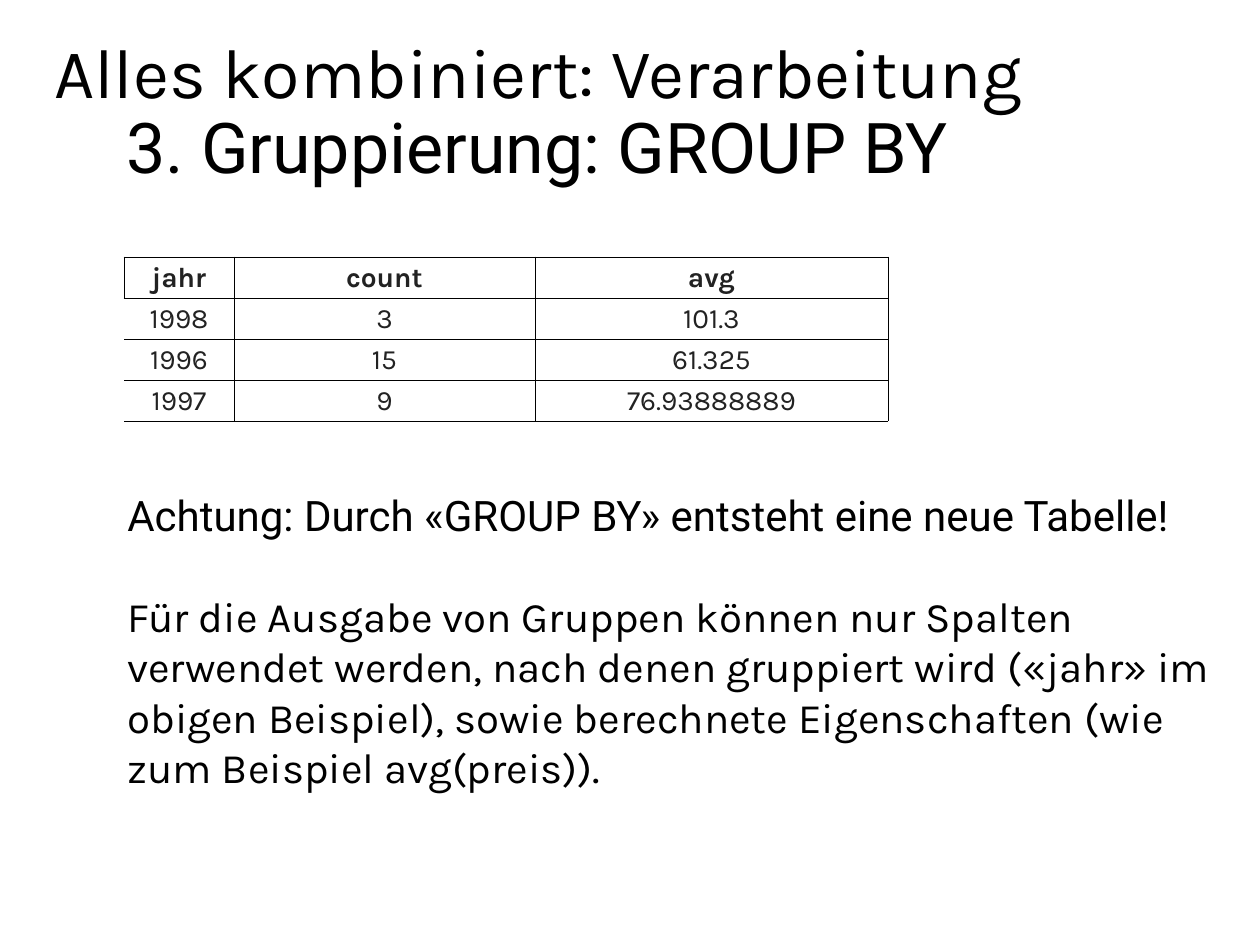
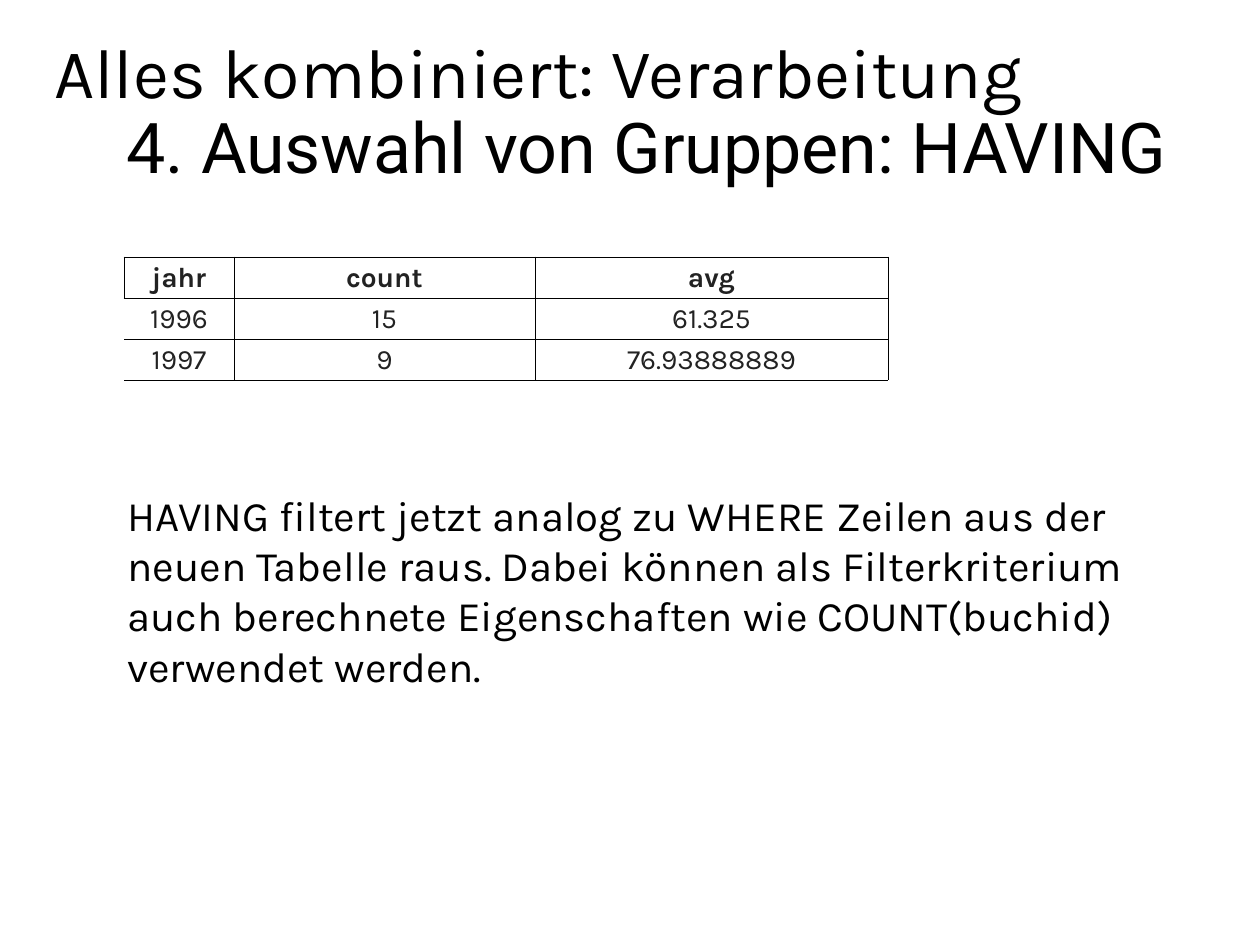
from copy import deepcopy
from lxml import etree
from pptx import Presentation
from pptx.dml.color import RGBColor
from pptx.enum.text import MSO_ANCHOR as Anchor, MSO_AUTO_SIZE as AutoSize, PP_ALIGN as Align
from pptx.oxml.ns import qn
from pptx.util import Emu, Pt

# Content
TITLE = "Alles kombiniert: Verarbeitung"
HEADER = ("jahr", "count", "avg")
ROW_1998 = ("1998", "3", "101.3")
ROW_1996 = ("1996", "15", "61.325")
ROW_1997 = ("1997", "9", "76.93888889")
SLIDES = [
    {
        "subtitle": "3. Gruppierung: GROUP BY",
        "rows": [ROW_1998, ROW_1996, ROW_1997],
        "body": [
            ("Achtung: Durch «GROUP BY» entsteht eine neue Tabelle!", "Roboto"),
            ("Für die Ausgabe von Gruppen können nur Spalten verwendet werden, "
             "nach denen gruppiert wird («jahr» im obigen Beispiel), sowie "
             "berechnete Eigenschaften (wie zum Beispiel avg(preis)).", "Karla"),
        ],
        "body_height": 369,
    },
    {
        "subtitle": "4. Auswahl von Gruppen: HAVING",
        "rows": [ROW_1996, ROW_1997],
        "body": [
            ("HAVING filtert jetzt analog zu WHERE Zeilen aus der neuen Tabelle "
             "raus. Dabei können als Filterkriterium auch berechnete "
             "Eigenschaften wie COUNT(buchid) verwendet werden.", "Karla"),
        ],
        "body_height": 267,
    },
]

# Shared look, lengths in px
BLACK, CELL_TEXT = "000000", "222222"
TITLE_BOX = (54, 38, 1181, 151)
TITLE_INDENT = 72
TABLE_LEFT, TABLE_TOP, ROW_HEIGHT = 124, 257, 41
COLUMNS = (110, 301, 353)
BODY_LEFT, BODY_TOP, BODY_WIDTH = 115, 483, 1111


def px(n):
    return Emu(round(n * 914400 / 126))


def rgb(hex_color):
    return RGBColor.from_string(hex_color)


def style(r, size, font, color=BLACK, bold=False):
    r.font.size, r.font.name, r.font.bold = Pt(size), font, bold
    r.font.color.rgb = rgb(color)


def set_border(cell, sides):
    """Draw the named sides in black and hide the others."""
    tcPr = cell._tc.get_or_add_tcPr()
    for i, side in enumerate("LRTB"):
        ln = etree.Element(qn(f"a:ln{side}"))
        if side in sides:
            ln.set("w", str(Pt(0.5)))
            fill = etree.SubElement(ln, qn("a:solidFill"))
            etree.SubElement(fill, qn("a:srgbClr"), val=BLACK)
        else:
            ln.set("w", "0")
            etree.SubElement(ln, qn("a:noFill"))
        tcPr.insert(i, ln)


def add_title(s, subtitle):
    sp = s.shapes.title
    sp.left, sp.top, sp.width, sp.height = map(px, TITLE_BOX)
    tf = sp.text_frame
    tf.text = f"{TITLE}\v{subtitle}"
    tf.word_wrap, tf.auto_size = True, AutoSize.NONE
    tf.vertical_anchor = Anchor.MIDDLE
    tf.margin_left = 0
    p = tf.paragraphs[0]
    p.alignment, p.line_spacing = Align.LEFT, 0.9
    pPr = p._p.get_or_add_pPr()
    pPr.set("marL", str(px(TITLE_INDENT)))
    pPr.set("indent", str(-px(TITLE_INDENT)))
    for r, font in zip(p.runs, ("Karla", "Roboto")):
        style(r, 40, font)
    # The line break takes the size of the first line
    p._p.find(qn("a:br")).append(deepcopy(p.runs[0]._r.rPr))


def add_result_table(s, rows):
    rows = [HEADER, *rows]
    frame = s.shapes.add_table(len(rows), len(COLUMNS), px(TABLE_LEFT), px(TABLE_TOP),
                               px(sum(COLUMNS)), px(ROW_HEIGHT * len(rows)))
    table = frame.table
    table.first_row = table.horz_banding = False
    for column, width in zip(table.columns, COLUMNS):
        column.width = px(width)
    for i, row in enumerate(rows):
        table.rows[i].height = px(ROW_HEIGHT)
        for j, value in enumerate(row):
            cell = table.cell(i, j)
            cell.text = value
            cell.fill.background()
            cell.vertical_anchor = Anchor.MIDDLE
            cell.margin_left = cell.margin_right = cell.margin_top = px(1)
            cell.margin_bottom = 0
            p = cell.text_frame.paragraphs[0]
            p.alignment = Align.CENTER
            style(p.runs[0], 16, "Karla", CELL_TEXT, bold=i == 0)
            set_border(cell, "RTB" if i > 0 and j == 0 else "LRTB")


def add_body(s, paragraphs, height):
    sp = s.shapes.add_textbox(px(BODY_LEFT), px(BODY_TOP), px(BODY_WIDTH), px(height))
    tf = sp.text_frame
    tf.word_wrap, tf.auto_size = True, AutoSize.SHAPE_TO_FIT_TEXT
    for i, (text, font) in enumerate(paragraphs):
        p = tf.add_paragraph() if i else tf.paragraphs[0]
        p.text = text
        p.space_before = Pt(29 if i else 0)
        style(p.runs[0], 24, font)


def main():
    prs = Presentation()
    prs.slide_width, prs.slide_height = px(1260), px(945)
    for content in SLIDES:
        s = prs.slides.add_slide(prs.slide_layouts[5])
        add_title(s, content["subtitle"])
        add_result_table(s, content["rows"])
        add_body(s, content["body"], content["body_height"])
    prs.save("out.pptx")


if __name__ == "__main__":
    main()
